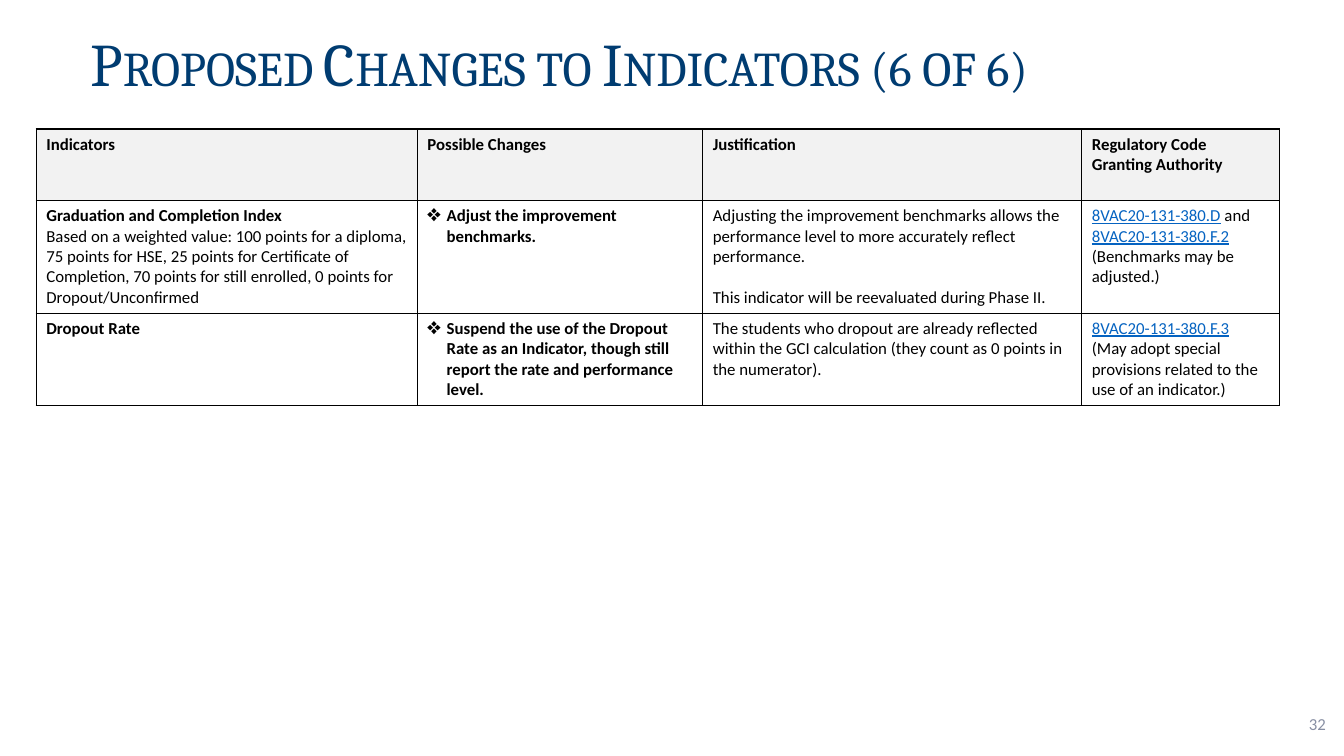
"""Build the slide on proposed changes to indicators."""
from dataclasses import dataclass

from lxml.etree import SubElement
from pptx import Presentation
from pptx.dml.color import RGBColor
from pptx.enum.text import MSO_ANCHOR as Anchor, MSO_AUTO_SIZE as AutoSize, PP_ALIGN as Align
from pptx.oxml.ns import qn
from pptx.slide import Slide
from pptx.table import _Cell as Cell
from pptx.text.text import _Paragraph as Paragraph, _Run as Run
from pptx.util import Inches, Pt

NAVY = RGBColor(0x00, 0x3C, 0x71)
BLACK = RGBColor(0x00, 0x00, 0x00)
LINK = RGBColor(0x05, 0x63, 0xC1)
GREY = RGBColor(0x88, 0x8F, 0xA3)
HEADER = RGBColor(0xF2, 0xF2, 0xF2)
WIDTH, HEIGHT = Inches(13.33), Inches(7.5)
COLS = (3.78, 2.83, 3.76, 1.96)
ROWS = (0.71, 1.12, 0.91)


@dataclass(frozen=True)
class Span:
    text: str
    bold: bool = False
    link: bool = False


@dataclass(frozen=True)
class Para:
    spans: tuple[Span, ...]
    bullet: bool = False
    before: float = 0


def plain(text: str, before: float = 0) -> Para:
    """Return a regular paragraph."""
    return Para((Span(text),), before=before)


def strong(text: str, bullet: bool = False) -> Para:
    """Return a bold paragraph, bulleted on request."""
    return Para((Span(text, bold=True),), bullet)


TABLE: tuple[tuple[tuple[Para, ...], ...], ...] = (
    tuple((strong(heading),) for heading in (
        "Indicators", "Possible Changes", "Justification", "Regulatory Code Granting Authority")),
    (
        (strong("Graduation and Completion Index"),
         plain("Based on a weighted value: 100 points for a diploma, 75 points for HSE, "
               "25 points for Certificate of Completion, 70 points for still enrolled, "
               "0 points for Dropout/Unconfirmed")),
        (strong("Adjust the improvement benchmarks.", bullet=True),),
        (plain("Adjusting the improvement benchmarks allows the performance level "
               "to more accurately reflect performance."),
         plain("This indicator will be reevaluated during Phase II.", before=14.6)),
        (Para((Span("8VAC20-131-380.D", link=True), Span(" and "),
               Span("8VAC20-131-380.F.2", link=True))),
         plain("(Benchmarks may be adjusted.)")),
    ),
    (
        (strong("Dropout Rate"),),
        (strong("Suspend the use of the Dropout Rate as an Indicator, though still "
                "report the rate and performance level.", bullet=True),),
        (plain("The students who dropout are already reflected within the GCI calculation "
               "(they count as 0 points in the numerator)."),),
        (Para((Span("8VAC20-131-380.F.3", link=True),)),
         plain("(May adopt special provisions related to the use of an indicator.)")),
    ),
)


def add_run(p: Paragraph, text: str, size: float, color: RGBColor, font: str = "Calibri") -> Run:
    """Append a formatted run and return it."""
    r = p.add_run()
    r.text = text
    r.font.size, r.font.name = Pt(size), font
    r.font.color.rgb = color
    return r


def add_bullet(p: Paragraph) -> None:
    """Give the paragraph a black diamond bullet with a hanging indent."""
    pPr = p._p.get_or_add_pPr()
    pPr.set("marL", str(Inches(0.19)))
    pPr.set("indent", str(-Inches(0.19)))
    color = SubElement(pPr, qn("a:buClr"))
    SubElement(color, qn("a:srgbClr"), val=str(BLACK))
    SubElement(pPr, qn("a:buSzPct"), val="140000")
    SubElement(pPr, qn("a:buChar"), char="❖")


def add_borders(cell: Cell) -> None:
    """Draw a thin black line on all four sides of the cell."""
    tcPr = cell._tc.get_or_add_tcPr()
    for side in "LRTB":
        ln = SubElement(tcPr, qn(f"a:ln{side}"), w=str(Pt(1)))
        fill = SubElement(ln, qn("a:solidFill"))
        SubElement(fill, qn("a:srgbClr"), val=str(BLACK))


def fill_cell(cell: Cell, paras: tuple[Para, ...], header: bool) -> None:
    """Write the paragraphs and format the cell."""
    add_borders(cell)
    if header:
        cell.fill.solid()
        cell.fill.fore_color.rgb = HEADER
    else:
        cell.fill.background()
    tf = cell.text_frame
    for i, para in enumerate(paras):
        p = tf.add_paragraph() if i else tf.paragraphs[0]
        if para.before:
            p.space_before = Pt(para.before)
        if para.bullet:
            add_bullet(p)
        for span in para.spans:
            r = add_run(p, span.text, 12, LINK if span.link else BLACK)
            r.font.bold, r.font.underline = span.bold, span.link


def add_title(s: Slide) -> None:
    """Set the small-caps title across the top."""
    sp = s.shapes.title
    sp.left, sp.top, sp.width, sp.height = 0, Inches(0.01), WIDTH, Inches(1.03)
    tf = sp.text_frame
    tf.auto_size, tf.word_wrap = AutoSize.NONE, True
    tf.vertical_anchor, tf.margin_left = Anchor.BOTTOM, Inches(0.9)
    p = tf.paragraphs[0]
    p.alignment, p.line_spacing = Align.LEFT, 0.9
    r = add_run(p, "Proposed Changes to Indicators (6 of 6)", 43.2, NAVY, "Cambria")
    r._r.get_or_add_rPr().set("cap", "small")


def add_table(s: Slide) -> None:
    """Add the table of indicators."""
    sp = s.shapes.add_table(len(ROWS), len(COLS), Inches(0.36), Inches(1.28),
                            Inches(sum(COLS)), Inches(sum(ROWS)))
    table = sp.table
    table.first_row = table.horz_banding = False
    for col, width in zip(table.columns, COLS):
        col.width = Inches(width)
    for i, (row, height) in enumerate(zip(table.rows, ROWS)):
        row.height = Inches(height)
        for cell, paras in zip(row.cells, TABLE[i]):
            fill_cell(cell, paras, header=i == 0)


def add_page_number(s: Slide) -> None:
    """Put the page number in the lower right corner."""
    sp = s.shapes.add_textbox(Inches(10.25), Inches(6.98), Inches(3), Inches(0.4))
    tf = sp.text_frame
    tf.word_wrap, tf.vertical_anchor = True, Anchor.MIDDLE
    p = tf.paragraphs[0]
    p.alignment = Align.RIGHT
    add_run(p, "32", 12, GREY)


def main() -> None:
    """Build and save the presentation."""
    prs = Presentation()
    prs.slide_width, prs.slide_height = WIDTH, HEIGHT
    s = prs.slides.add_slide(prs.slide_layouts[5])
    add_title(s)
    add_table(s)
    add_page_number(s)
    prs.save("out.pptx")


if __name__ == "__main__":
    main()
